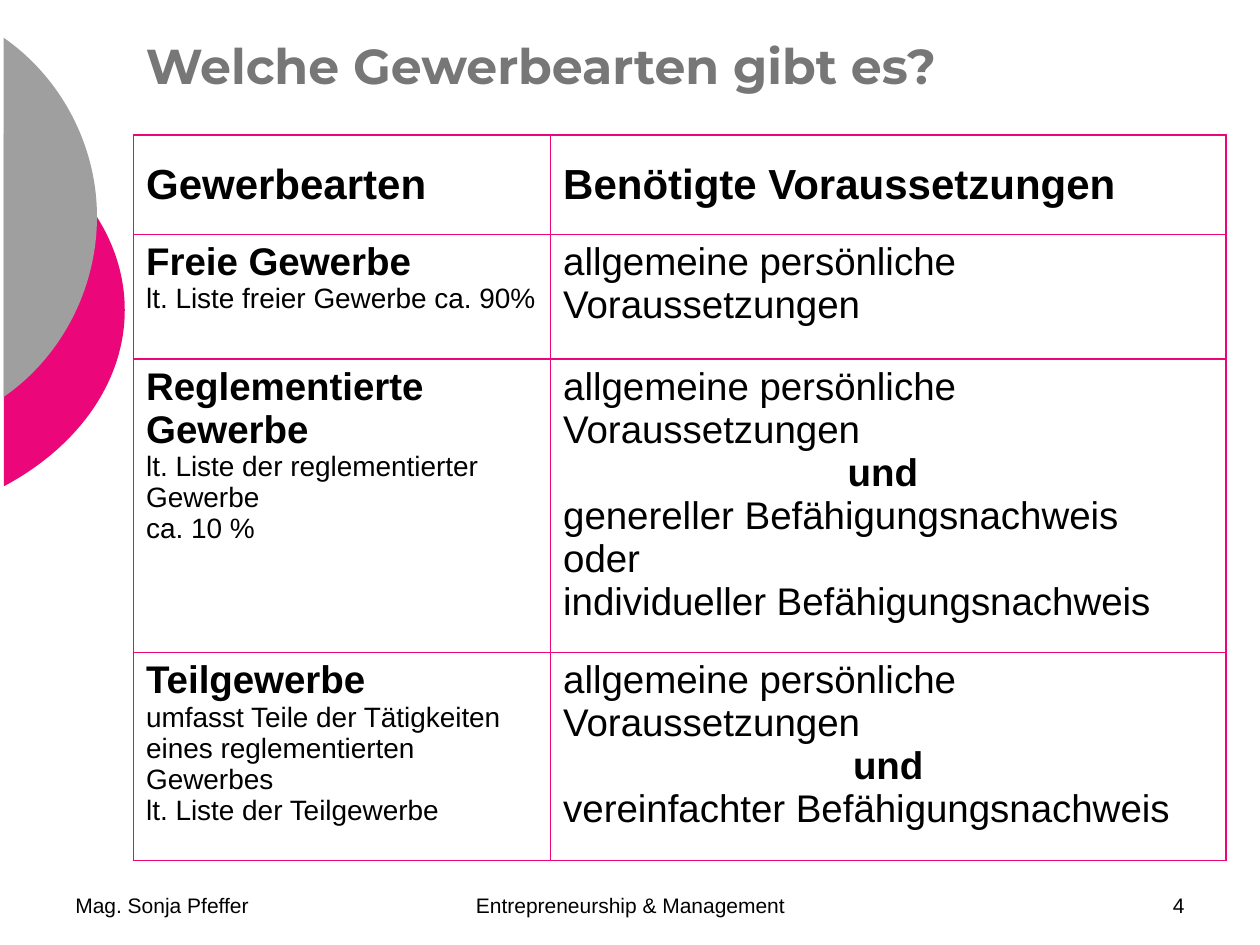
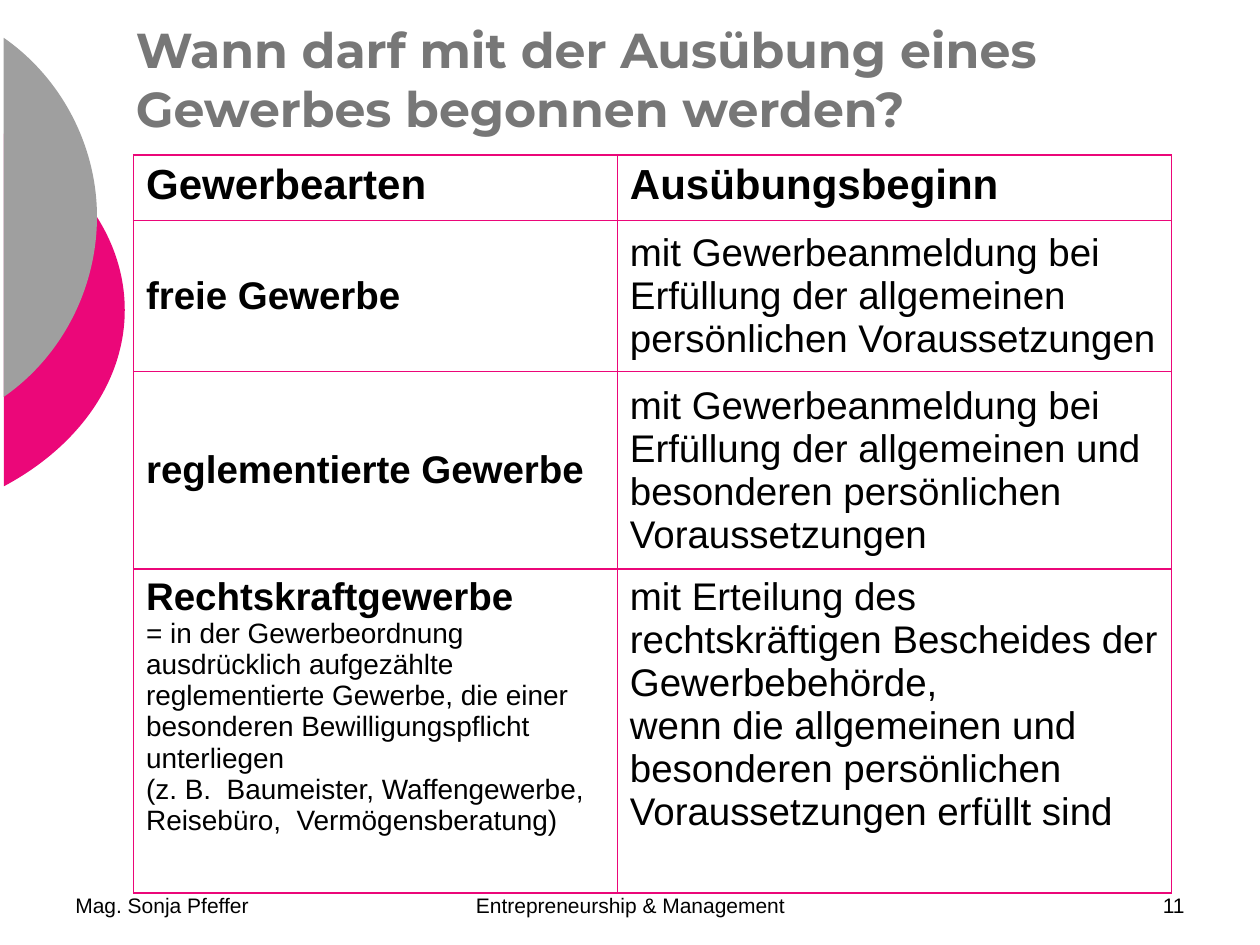
from dataclasses import dataclass

from lxml import etree
from pptx import Presentation
from pptx.dml.color import RGBColor
from pptx.enum.text import MSO_ANCHOR, PP_ALIGN
from pptx.oxml.ns import qn
from pptx.util import Inches, Pt

TOP, MIDDLE, BOTTOM = MSO_ANCHOR.TOP, MSO_ANCHOR.MIDDLE, MSO_ANCHOR.BOTTOM
LEFT, CENTER, RIGHT = PP_ALIGN.LEFT, PP_ALIGN.CENTER, PP_ALIGN.RIGHT


@dataclass(frozen=True)
class Theme:
    pink: str = "EB0779"
    grey: str = "9F9F9F"
    title_color: str = "777777"
    text_color: str = "000000"
    title_font: str = "Montserrat"
    body_font: str = "Arial"
    title_size: int = 28
    footer_size: int = 12
    border: int = 1


THEME = Theme()

# style: (size, bold, alignment)
STYLES = {
    "head": (24, True, LEFT),
    "kind": (22, True, LEFT),
    "note": (16, False, LEFT),
    "body": (22, False, LEFT),
    "and": (22, True, CENTER),
}

AUTHOR = "Mag. Sonja Pfeffer"
COURSE = "Entrepreneurship & Management"
GENERAL = ("body", "allgemeine persönliche Voraussetzungen")

# Each row: height, anchor, left cell, right cell; a cell lists (style, text)
SLIDES = [
    {
        "title": "Welche Gewerbearten gibt es?",
        "title_box": (1.06, 0.21, 8, 0.59),
        "number": "4",
        "table_at": (1.06, 1.07),
        "cols": (3.31, 5.36),
        "rows": [
            (0.79, MIDDLE,
             [("head", "Gewerbearten")],
             [("head", "Benötigte Voraussetzungen")]),
            (0.99, TOP,
             [("kind", "Freie Gewerbe"),
              ("note", "lt. Liste freier Gewerbe ca. 90%")],
             [GENERAL]),
            (2.33, TOP,
             [("kind", "Reglementierte"),
              ("kind", "Gewerbe"),
              ("note", "lt. Liste der reglementierter Gewerbe"),
              ("note", "ca. 10 %")],
             [GENERAL,
              ("and", "und "),
              ("body", "genereller Befähigungsnachweis"),
              ("body", "oder"),
              ("body", "individueller Befähigungsnachweis")]),
            (1.65, TOP,
             [("kind", "Teilgewerbe"),
              ("note", "umfasst Teile der Tätigkeiten eines "
                       "reglementierten Gewerbes"),
              ("note", "lt. Liste der Teilgewerbe")],
             [GENERAL,
              ("and", "und"),
              ("body", "vereinfachter Befähigungsnachweis")]),
        ],
    },
    {
        "title": "Wann darf mit der Ausübung eines Gewerbes begonnen werden?",
        "title_box": (0.98, 0.52, 8, 0.62),
        "number": "11",
        "table_at": (1.06, 1.23),
        "cols": (3.84, 4.4),
        "rows": [
            (0.52, TOP,
             [("head", "Gewerbearten")],
             [("head", "Ausübungsbeginn")]),
            (1.2, MIDDLE,
             [("kind", "freie Gewerbe")],
             [("body", "mit Gewerbeanmeldung bei Erfüllung der allgemeinen "
                       "persönlichen Voraussetzungen")]),
            (1.56, MIDDLE,
             [("kind", "reglementierte Gewerbe")],
             [("body", "mit Gewerbeanmeldung bei Erfüllung der allgemeinen "
                       "und besonderen persönlichen Voraussetzungen")]),
            (2.57, TOP,
             [("kind", "Rechtskraftgewerbe"),
              ("note", "= in der Gewerbeordnung ausdrücklich aufgezählte "
                       "reglementierte Gewerbe, die einer besonderen "
                       "Bewilligungspflicht unterliegen"),
              ("note", "(z. B.  Baumeister, Waffengewerbe, Reisebüro,  "
                       "Vermögensberatung)")],
             [("body", "mit Erteilung des rechtskräftigen Bescheides der "
                       "Gewerbebehörde, \vwenn die allgemeinen und besonderen "
                       "persönlichen Voraussetzungen erfüllt sind")]),
        ],
    },
]

# Ellipses cut off near the left edge: colour, frame of the whole ellipse,
# start of the visible arc and its two Bézier curves
SEGMENTS = [
    (THEME.pink, (-3.51, 0.75, 4.5, 3.42), (0.03, 1.06),
     [[(0.63, 1.38), (0.99, 1.9), (0.99, 2.46)],
      [(0.99, 3.02), (0.63, 3.54), (0.03, 3.86)]]),
    (THEME.grey, (-2.62, 0, 3.38, 3.45), (0.03, 0.3),
     [[(0.49, 0.62), (0.77, 1.16), (0.77, 1.72)],
      [(0.77, 2.29), (0.49, 2.83), (0.03, 3.15)]]),
]

FOOTER_TOP, FOOTER_HEIGHT = 6.83, 0.5


def add_path_step(path, tag, points, origin):
    step = etree.SubElement(path, qn(f"a:{tag}"))
    for x, y in points:
        etree.SubElement(step, qn("a:pt"), x=str(Inches(x - origin[0])),
                         y=str(Inches(y - origin[1])))


def add_segments(s):
    for color, (left, top, width, height), start, curves in SEGMENTS:
        right, bottom = left + width, top + height
        builder = s.shapes.build_freeform(Inches(left), Inches(top))
        builder.add_line_segments(
            [(Inches(x), Inches(y))
             for x, y in ((right, top), (right, bottom), (left, bottom))])
        sp = builder.convert_to_shape()
        path = sp._element.find(f".//{qn('a:path')}")
        for step in list(path):
            path.remove(step)
        add_path_step(path, "moveTo", [start], (left, top))
        for curve in curves:
            add_path_step(path, "cubicBezTo", curve, (left, top))
        add_path_step(path, "close", [], (left, top))
        sp.shadow.inherit = False
        sp.fill.solid()
        sp.fill.fore_color.rgb = RGBColor.from_string(color)
        sp.line.fill.background()


def set_text(p, text, font, size, color, bold=False, align=LEFT):
    p.text = text
    p.alignment = align
    p.font.name = font
    p.font.size = Pt(size)
    p.font.bold = bold
    p.font.color.rgb = RGBColor.from_string(color)


def add_text(s, box, *text_args, **text_options):
    tf = s.shapes.add_textbox(*map(Inches, box)).text_frame
    tf.word_wrap = True
    tf.vertical_anchor = BOTTOM
    set_text(tf.paragraphs[0], *text_args, **text_options)


def add_footer(s, number):
    parts = [(0.5, 2.33, AUTHOR, LEFT),
             (3.42, 3.17, COURSE, CENTER),
             (7.17, 2.33, number, RIGHT)]
    for left, width, text, align in parts:
        add_text(s, (left, FOOTER_TOP, width, FOOTER_HEIGHT), text,
                 THEME.body_font, THEME.footer_size, THEME.text_color,
                 align=align)


def set_borders(cell):
    tc_pr = cell._tc.get_or_add_tcPr()
    for i, side in enumerate(("lnL", "lnR", "lnT", "lnB")):
        ln = etree.Element(qn(f"a:{side}"), w=str(Pt(THEME.border)))
        fill = etree.SubElement(ln, qn("a:solidFill"))
        etree.SubElement(fill, qn("a:srgbClr"), val=THEME.pink)
        tc_pr.insert(i, ln)


def fill_cell(cell, anchor, content):
    cell.fill.background()
    cell.vertical_anchor = anchor
    set_borders(cell)
    tf = cell.text_frame
    for i, (style, text) in enumerate(content):
        p = tf.add_paragraph() if i else tf.paragraphs[0]
        size, bold, align = STYLES[style]
        set_text(p, text, THEME.body_font, size, THEME.text_color, bold, align)


def add_trade_table(s, at, cols, rows):
    size = sum(cols), sum(row[0] for row in rows)
    table = s.shapes.add_table(len(rows), len(cols),
                               *map(Inches, at + size)).table
    table.first_row = table.horz_banding = False
    for column, width in zip(table.columns, cols):
        column.width = Inches(width)
    for row, (height, anchor, *contents) in zip(table.rows, rows):
        row.height = Inches(height)
        for cell, content in zip(row.cells, contents):
            fill_cell(cell, anchor, content)


def main():
    prs = Presentation()
    prs.slide_width, prs.slide_height = Inches(10), Inches(7.5)
    blank = prs.slide_layouts[6]
    for data in SLIDES:
        s = prs.slides.add_slide(blank)
        add_segments(s)
        add_text(s, data["title_box"], data["title"], THEME.title_font,
                 THEME.title_size, THEME.title_color, bold=True)
        add_trade_table(s, data["table_at"], data["cols"], data["rows"])
        add_footer(s, data["number"])
    prs.save("out.pptx")


if __name__ == "__main__":
    main()
